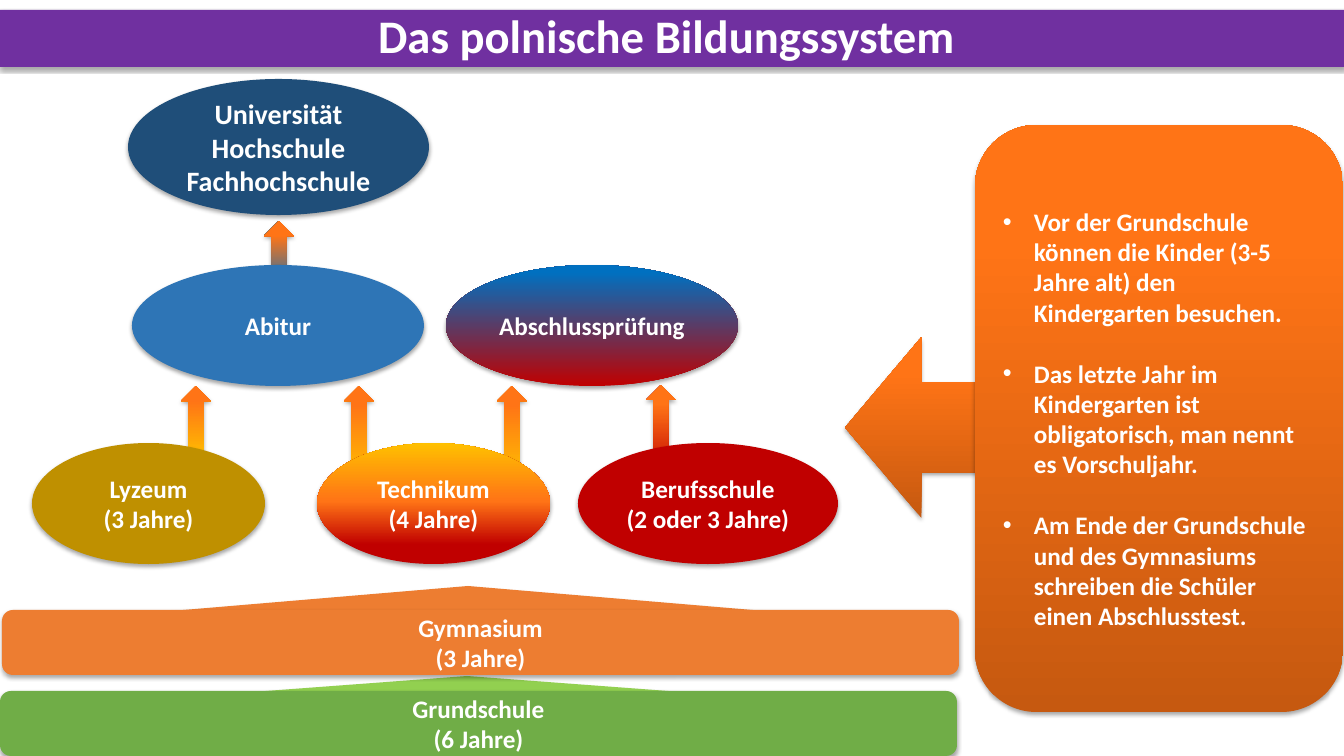
from dataclasses import dataclass
from pptx import Presentation, util as u
from pptx.dml.color import RGBColor
from pptx.enum import shapes, text
from pptx.oxml import parse_xml

KIND = shapes.MSO_SHAPE
ALIGN = text.PP_ALIGN
NS = 'xmlns:a="http://schemas.openxmlformats.org/drawingml/2006/main"'
GLOW = ((80, "FF7416"), (100, "FF7517"))


@dataclass(frozen=True)
class Theme:
    face: str = "Calibri"
    head: float = 33.3
    large: int = 20
    body: int = 18
    gap: int = 22
    white: str = "FFFFFF"
    purple: str = "7030A0"
    navy: str = "1F4E79"
    blue: str = "2E75B6"
    gold: str = "BF9000"
    red: str = "C00000"
    orange: str = "ED7D31"
    green: str = "70AD47"
    lime: str = "92D050"
    sky: tuple = ((0, "0070C0"), *GLOW)
    fire: tuple = ((0, "C00000"), *GLOW)
    sun: tuple = ((0, "FFC000"), *GLOW)
    rust: tuple = ((0, "C65910"), *GLOW)
    flame: tuple = ((16, "C00000"), (52, "FF7416"), (100, "FFC000"))
    dusk: tuple = ((0, "C00000"), (94, "0070C0"))


T = Theme()


def px(n):
    return u.Emu(round(n * 914400 / 100.8))


def put(item, **values):
    for name, value in values.items():
        setattr(item, name, value)


def draw(slide, kind, box, fill):
    shape = slide.shapes.add_shape(kind, *map(px, box))
    shape.line.fill.background()
    shape.shadow.inherit = False
    props = shape._element.spPr
    props[-1].append(parse_xml(
        f'<a:outerShdw {NS} blurRad="39370" dist="22860" dir="5400000" rotWithShape="0">'
        '<a:srgbClr val="000000"><a:alpha val="35000"/></a:srgbClr></a:outerShdw>'))
    if isinstance(fill, str):
        shape.fill.solid()
        shape.fill.fore_color.rgb = RGBColor.from_string(fill)
    else:
        stops = "".join(f'<a:gs pos="{pos * 1000}"><a:srgbClr val="{tone}"/></a:gs>'
                        for pos, tone in fill)
        props[-2].addprevious(parse_xml(
            f'<a:gradFill {NS} rotWithShape="1"><a:gsLst>{stops}</a:gsLst>'
            '<a:lin ang="16200000" scaled="0"/></a:gradFill>'))
    return shape


def write(shape, lines, size=T.body, side=4, align=ALIGN.CENTER, bullet=False, **form):
    frame = shape.text_frame
    put(frame, word_wrap=True, vertical_anchor=text.MSO_ANCHOR.MIDDLE,
        margin_left=px(side), margin_right=px(side), margin_top=px(5), margin_bottom=px(5))
    for i, line in enumerate(lines):
        para = frame.add_paragraph() if i else frame.paragraphs[0]
        put(para, alignment=align, **form)
        if bullet:
            props = para._p.get_or_add_pPr()
            props.set("marL", str(px(31)))
            props.set("indent", str(-px(31)))
            if i:
                para.space_before = u.Pt(T.gap)
            props.append(parse_xml(f'<a:buFont {NS} typeface="Arial"/>'))
            props.append(parse_xml(f'<a:buChar {NS} char="•"/>'))
        run = para.add_run()
        run.text = line
        put(run.font, name=T.face, size=u.Pt(size), bold=True)
        run.font.color.rgb = RGBColor.from_string(T.white)


def title(slide, box):
    bar = draw(slide, KIND.RECTANGLE, box, T.purple)
    write(bar, ["Das polnische Bildungssystem "], T.head, 10, line_spacing=0.9)


def base(slide, x, y, wide):
    levels = (
        (58, 90, 61, T.lime, 0, 105, T.green, ("Grundschule", "(6 Jahre)")),
        (59, 0, 69, T.orange, 2, 24, T.orange, ("Gymnasium", "(3 Jahre)")),
    )
    for left, top, high, tint, start, down, fill, lines in levels:
        draw(slide, KIND.UP_ARROW, (x + left, y + top, 818, high), tint)
        bar = draw(slide, KIND.ROUNDED_RECTANGLE, (x + start, y + down, wide, 65), fill)
        write(bar, lines)


def paths(slide, x, y):
    arrows = (
        (232, 142, 73, T.sky),
        (614, 306, 93, T.fire),
        (465, 307, 93, T.sun),
        (312, 307, 93, T.sun),
        (149, 307, 73, T.sun),
    )
    for left, top, high, fill in arrows:
        draw(slide, KIND.UP_ARROW, (x + left, y + top, 30, high), fill)
    schools = (
        (96, 0, 301, 136, T.navy, T.large, ("Universität", "Hochschule", "Fachhochschule")),
        (0, 364, 233, 121, T.gold, T.body, ("Lyzeum", "(3 Jahre)")),
        (285, 364, 233, 121, T.flame, T.body, ("Technikum", "(4 Jahre)")),
        (546, 364, 260, 121, T.red, T.body, ("Berufsschule", "(2 oder 3 Jahre)")),
        (414, 186, 292, 121, T.dusk, T.body, ("Abschlussprüfung",)),
        (100, 186, 292, 121, T.blue, T.body, ("Abitur",)),
    )
    for left, top, wide, high, fill, size, lines in schools:
        write(draw(slide, KIND.OVAL, (x + left, y + top, wide, high), fill), lines, size)


def notes(slide, x, y, wide, high):
    draw(slide, KIND.LEFT_ARROW, (x, y + 212, 153, 181), T.rust)
    panel = draw(slide, KIND.ROUNDED_RECTANGLE, (x + 130, y, wide - 130, high), T.rust)
    write(panel, (
        "Vor der Grundschule können die Kinder (3-5 Jahre alt) den Kindergarten besuchen.",
        "Das letzte Jahr im Kindergarten ist obligatorisch, man nennt es Vorschuljahr.",
        "Am Ende der Grundschule und des Gymnasiums schreiben die Schüler einen Abschlusstest.",
    ), side=10, align=ALIGN.LEFT, bullet=True)


def main():
    deck = Presentation()
    put(deck, slide_width=px(1344), slide_height=px(756))
    slide = deck.slides.add_slide(deck.slide_layouts[6])
    base(slide, 0, 586, 957)
    paths(slide, 32, 79)
    title(slide, (0, 10, 1344, 57))
    notes(slide, 845, 125, 498, 587)
    deck.save("out.pptx")


if __name__ == "__main__":
    main()
